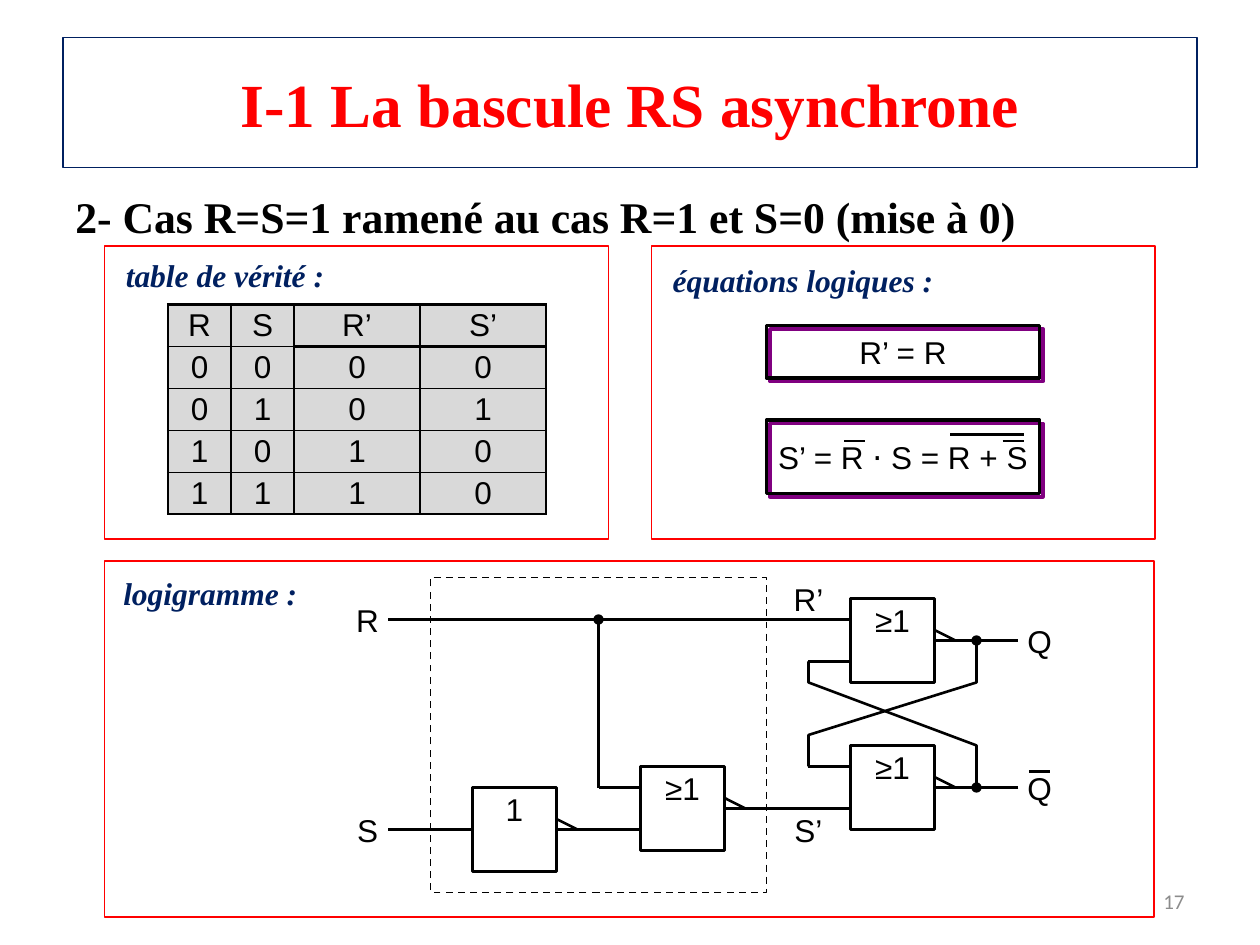
from dataclasses import dataclass

from lxml import etree
from pptx import Presentation
from pptx.dml.color import RGBColor
from pptx.enum.dml import MSO_LINE
from pptx.enum.shapes import MSO_CONNECTOR, MSO_SHAPE
from pptx.enum.text import MSO_ANCHOR, PP_ALIGN
from pptx.oxml.ns import qn
from pptx.util import Inches, Pt

RECTANGLE = MSO_SHAPE.RECTANGLE
STRAIGHT = MSO_CONNECTOR.STRAIGHT
DASH = MSO_LINE.DASH
LEFT, CENTER, RIGHT = PP_ALIGN.LEFT, PP_ALIGN.CENTER, PP_ALIGN.RIGHT
TOP, MIDDLE = MSO_ANCHOR.TOP, MSO_ANCHOR.MIDDLE

COLORS = {"black": "000000", "white": "FFFFFF", "red": "FF0000", "navy": "002060",
          "gray": "D9D9D9", "purple": "800080", "number": "8C8C8C"}


@dataclass(frozen=True)
class Style:
    color: str
    font: dict
    align: int = CENTER
    anchor: int = MIDDLE
    margin: float = 0
    wrap: bool = False


@dataclass(frozen=True)
class Gate:
    left: int
    top: int
    symbol: str
    inputs: tuple


TITLE = Style("red", {"name": "Times New Roman", "size": Pt(35), "bold": True}, wrap=True)
HEADING = Style("black", {"name": "Times New Roman", "size": Pt(25), "bold": True},
                LEFT, TOP, 0.1, True)
CAPTION = Style("navy", {"name": "Times New Roman", "size": Pt(18), "bold": True, "italic": True},
                LEFT, TOP, 0.1, True)
LABEL = Style("black", {"name": "Arial", "size": Pt(18)})
NUMBER = Style("number", {"name": "Calibri", "size": Pt(12)}, RIGHT, MIDDLE, 0.1, True)

GATE_SIZE = 8
GATES = [Gate(81, 57, "≥1", (2, 6)), Gate(81, 71, "≥1", (2, 6)),
         Gate(61, 73, "≥1", (2, 6)), Gate(45, 75, "1", (4,))]
TERMINALS = [("R", 33, 57), ("S", 33, 77), ("Q", 97, 59), ("Q", 97, 73)]
SIGNALS = [("R’", 75, 55), ("S’", 75, 77)]
WIRES = [((37, 59), (41, 59)), ((41, 59), (73, 59)), ((73, 59), (77, 59)),
         ((37, 79), (41, 79)), ((73, 77), (77, 77)), ((93, 61), (97, 61))]
DOTTED_WIRES = [((97, 75), (93, 75)), ((57, 75), (57, 59))]
OVERLINES = [((98, 73.5), (100, 73.5)), ((80.4, 42), (82.4, 42)),
             ((95.5, 42), (97.5, 42)), ((90.5, 41.4), (97.5, 41.4))]
TRUTH_TABLE = [("R", "S", "R’", "S’"), "0000", "0101", "1010", "1110"]
COLUMN_WIDTHS = (6, 6, 12, 12)


def rgb(name: str) -> RGBColor:
    return RGBColor.from_string(COLORS[name])


def inches(*values: float) -> tuple:
    return tuple(Inches(value) for value in values)


def twelfths(*values: float) -> tuple:
    return inches(*(value / 12 for value in values))


def set_line(shape, color: str, width: float) -> None:
    shape.line.color.rgb = rgb(color)
    shape.line.width = Pt(width)


def write(frame, text: str, style: Style) -> None:
    para = frame.paragraphs[0]
    para.alignment = style.align
    span = para.add_run()
    span.text = text
    for name, value in style.font.items():
        setattr(span.font, name, value)
    span.font.color.rgb = rgb(style.color)


def set_frame(frame, style: Style) -> None:
    frame.word_wrap = style.wrap
    frame.vertical_anchor = style.anchor
    frame.margin_left = frame.margin_right = Inches(style.margin)
    frame.margin_top = frame.margin_bottom = Inches(style.margin / 2)


def add_text(slide, place: tuple, text: str, style: Style):
    box = slide.shapes.add_textbox(*place)
    set_frame(box.text_frame, style)
    write(box.text_frame, text, style)
    return box


def add_box(slide, place: tuple, color: str, width: float, fill: str = ""):
    box = slide.shapes.add_shape(RECTANGLE, *place)
    box.shadow.inherit = False
    if fill:
        box.fill.solid()
        box.fill.fore_color.rgb = rgb(fill)
    else:
        box.fill.background()
    set_line(box, color, width)
    return box


def add_oval_end(shape, end: str) -> None:
    line = shape.element.spPr.find(qn("a:ln"))
    etree.SubElement(line, qn(f"a:{end}"), type="oval")


def add_wire(slide, start: tuple, end: tuple, joints: dict):
    wire = slide.shapes.add_connector(STRAIGHT, *twelfths(*start, *end))
    set_line(wire, "black", 1.5)
    etree.SubElement(wire.element.spPr, qn("a:effectLst"))
    if start in joints:
        wire.begin_connect(*joints[start])
    if end in joints:
        wire.end_connect(*joints[end])
    return wire


def add_joints(joints: dict, box, left: int, top: int, size: int) -> None:
    joints[(left, top + size // 2)] = (box, 1)
    joints[(left + size, top + size // 2)] = (box, 3)


def add_gate(slide, gate: Gate, joints: dict) -> None:
    left, top, right = gate.left, gate.top, gate.left + GATE_SIZE
    body = add_box(slide, twelfths(left, top, GATE_SIZE, GATE_SIZE), "black", 1.5, "white")
    add_joints(joints, body, left, top, GATE_SIZE)
    add_text(slide, twelfths(left, top, GATE_SIZE, 4), gate.symbol, LABEL)
    add_wire(slide, (right, top + 3), (right + 2, top + 4), joints)
    add_wire(slide, (right, top + 4), (right + 4, top + 4), joints)
    for offset in gate.inputs:
        add_wire(slide, (left - 4, top + offset), (left, top + offset), joints)


def add_feedback(slide, points: list):
    corners = [twelfths(*point) for point in points]
    builder = slide.shapes.build_freeform(*corners[0])
    builder.add_line_segments(corners[1:], close=False)
    loop = builder.convert_to_shape()
    loop.shadow.inherit = False
    loop.fill.background()
    set_line(loop, "black", 1.5)
    return loop


def add_equation(slide, place: tuple, text: str) -> None:
    add_text(slide, place, text, LABEL)
    box = add_box(slide, place, "black", 2)
    effects = box.element.spPr.find(qn("a:effectLst"))
    shadow = etree.SubElement(effects, qn("a:outerShdw"), dist=str(Pt(2.8)),
                              dir="2700000", algn="ctr", rotWithShape="0")
    etree.SubElement(shadow, qn("a:srgbClr"), val=COLORS["purple"])


def set_borders(cell, widths: dict) -> None:
    properties = cell._tc.get_or_add_tcPr()
    for side, width in widths.items():
        line = etree.SubElement(properties, qn(f"a:ln{side}"), w=str(Pt(width)))
        fill = etree.SubElement(line, qn("a:solidFill"))
        etree.SubElement(fill, qn("a:srgbClr"), val=COLORS["black"])


def add_truth_table(slide) -> None:
    count = len(TRUTH_TABLE)
    place = twelfths(16, 29, sum(COLUMN_WIDTHS), 4 * count)
    table = slide.shapes.add_table(count, len(COLUMN_WIDTHS), *place).table
    table.first_row = table.horz_banding = False
    for column, width in zip(table.columns, COLUMN_WIDTHS):
        column.width = Inches(width / 12)
    for row, values in enumerate(TRUTH_TABLE):
        for column, value in enumerate(values):
            cell = table.cell(row, column)
            header_rule = 1.5 if column > 1 else 0.75
            rules = [1.5, header_rule] + [0.75] * (count - 2) + [1.5]
            set_borders(cell, {"L": 1.5, "R": 1.5, "T": rules[row], "B": rules[row + 1]})
            cell.fill.solid()
            cell.fill.fore_color.rgb = rgb("gray")
            cell.margin_left = cell.margin_right = cell.margin_top = cell.margin_bottom = 0
            cell.vertical_anchor = MIDDLE
            write(cell.text_frame, value, LABEL)


def add_circuit(slide) -> None:
    joints = {}
    add_box(slide, twelfths(41, 55, 32, 30), "black", 1).line.dash_style = DASH
    for text, left, top in TERMINALS:
        box = add_text(slide, twelfths(left, top, 4, 4), text, LABEL)
        add_joints(joints, box, left, top, 4)
    for text, left, top in SIGNALS:
        add_text(slide, twelfths(left, top, 4, 4), text, LABEL)
    for gate in GATES:
        add_gate(slide, gate, joints)
    for start, end in WIRES:
        add_wire(slide, start, end, joints)
    for start, end in DOTTED_WIRES:
        add_oval_end(add_wire(slide, start, end, joints), "tailEnd")
    add_oval_end(add_feedback(slide, [(93, 61), (93, 65), (77, 70), (77, 73)]), "headEnd")
    add_feedback(slide, [(93, 75), (93, 71), (77, 65), (77, 63)])


def main() -> None:
    deck = Presentation()
    deck.slide_width, deck.slide_height = inches(10, 7.5)
    slide = deck.slides.add_slide(deck.slide_layouts[6])
    title = add_box(slide, inches(0.5, 0.3, 9, 1.03), "navy", 0.75)
    set_frame(title.text_frame, TITLE)
    write(title.text_frame, "I-1 La bascule RS asynchrone", TITLE)
    add_text(slide, inches(0.5, 1.46, 9, 0.42),
             "2- Cas R=S=1 ramené au cas R=1 et S=0 (mise à 0)", HEADING)
    for panel, caption, text in [
            ((0.83, 1.95, 4, 2.33), (0.9, 1.98, 1.92, 0.4), "table de vérité :"),
            ((5.17, 1.95, 4, 2.33), (5.24, 2.02, 3.58, 0.4), "équations logiques :"),
            ((0.83, 4.45, 8.33, 2.83), (0.88, 4.51, 1.92, 0.4), "logigramme :")]:
        add_box(slide, inches(*panel), "red", 1)
        add_text(slide, inches(*caption), text, CAPTION)
    add_truth_table(slide)
    add_equation(slide, twelfths(73, 31, 26, 5), "R’ = R")
    add_equation(slide, twelfths(73, 40, 26, 7), "S’ = R ⋅ S = R + S")
    add_circuit(slide)
    for start, end in OVERLINES:
        add_wire(slide, start, end, {})
    add_text(slide, inches(7.17, 6.95, 2.33, 0.4), "17", NUMBER)
    deck.save("out.pptx")


if __name__ == "__main__":
    main()
